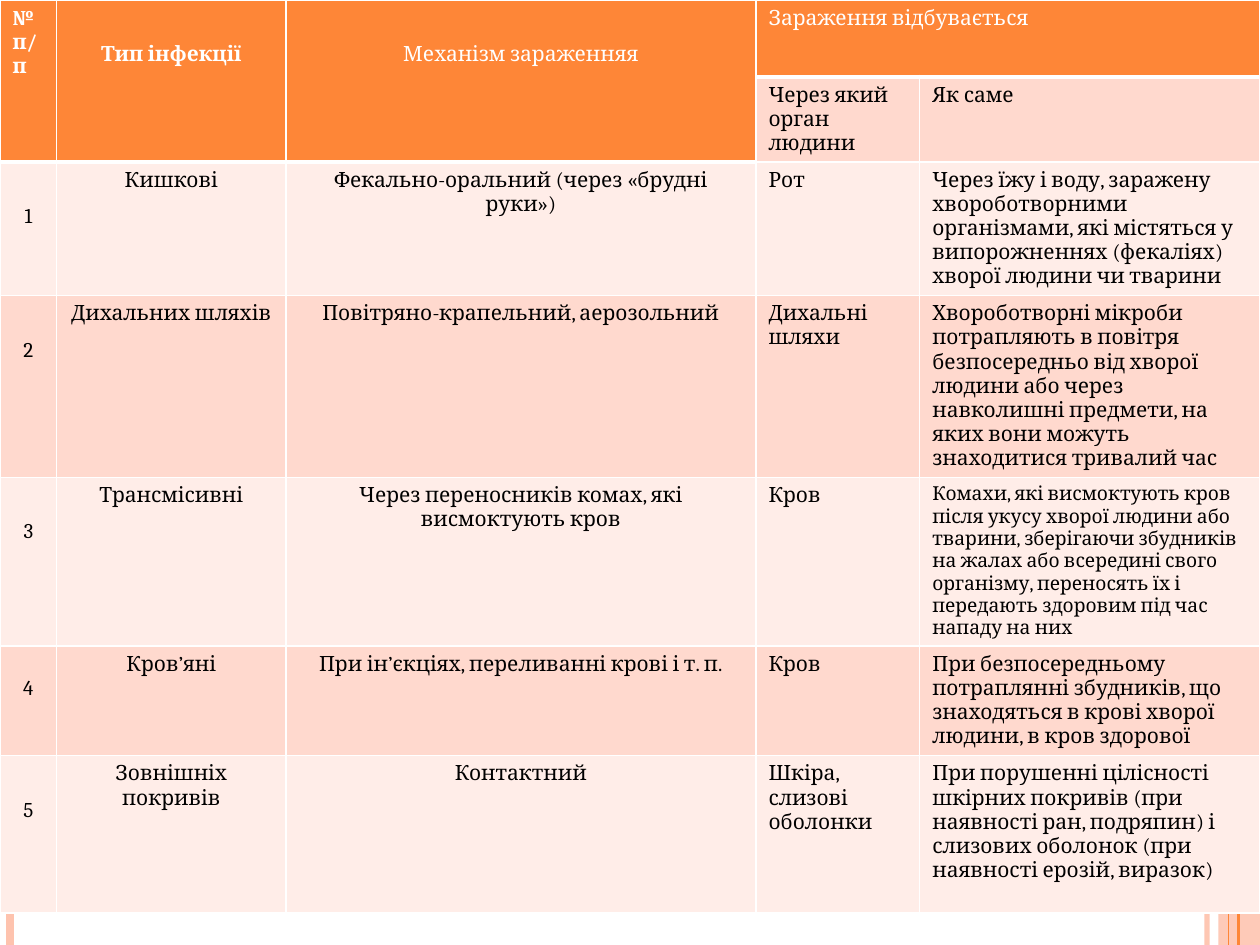
from lxml import etree
from pptx import Presentation
from pptx.dml.color import RGBColor
from pptx.enum.shapes import MSO_CONNECTOR, MSO_SHAPE
from pptx.enum.text import PP_ALIGN
from pptx.oxml.ns import qn
from pptx.util import Inches, Pt

LINE, RECT = MSO_CONNECTOR.STRAIGHT, MSO_SHAPE.RECTANGLE
LEFT, MID = PP_ALIGN.LEFT, PP_ALIGN.CENTER
HUES = {"head": "FE8637", "pale": "FEC3AE", "dark": "FFD9CE",
        "light": "FFEDE8", "white": "FFFFFF", "black": "000000"}
WIDE, HIGH = 10, 7.5
COLS = [0.45, 1.82, 3.73, 1.3, 2.7]
ROWS = [0.61, 0.67, 1.06, 1.44, 1.34, 0.87, 1.25]
DROP, HALF = 0.34, 0.24  # top margins of the lowered text

TEXT = [
    ["№\nп/п", "Тип інфекції", "Механізм зараженняя", "Зараження відбувається", ""],
    ["", "", "", "Через який орган людини", "Як саме"],
    ["1", "Кишкові", "Фекально-оральний (через «брудні руки»)", "Рот",
     "Через їжу і воду, заражену хвороботворними організмами, які містяться "
     "у випорожненнях (фекаліях) хворої людини чи тварини"],
    ["2", "Дихальних шляхів", "Повітряно-крапельний, аерозольний", "Дихальні шляхи",
     "Хвороботворні мікроби потрапляють в повітря безпосередньо від хворої людини "
     "або через навколишні предмети, на яких вони можуть знаходитися тривалий час"],
    ["3", "Трансмісивні", "Через переносників комах, які висмоктують кров", "Кров",
     "Комахи, які висмоктують кров після укусу хворої людини або тварини, зберігаючи "
     "збудників на жалах або всередині свого організму, переносять їх і передають "
     "здоровим під час нападу на них"],
    ["4", "Кров’яні", "При ін’єкціях, переливанні крові і т. п.", "Кров",
     "При безпосередньому потраплянні збудників, що знаходяться в крові хворої людини, "
     "в кров здорової"],
    ["5", "Зовнішніх покривів", "Контактний", "Шкіра, слизові оболонки",
     "При порушенні цілісності шкірних покривів (при наявності ран, подряпин) "
     "і слизових оболонок (при наявності ерозій, виразок)"],
]


def fade(fill, share):
    """Make the solid colour under an element see-through."""
    hue = fill.find(".//" + qn("a:srgbClr"))
    etree.SubElement(hue, qn("a:alpha"), val=str(share * 1000))


def edge(cell, side, width):
    """Give one side of a cell a white border."""
    line = etree.Element(qn("a:ln" + side), w=str(Pt(width)))
    fill = etree.SubElement(line, qn("a:solidFill"))
    etree.SubElement(fill, qn("a:srgbClr"), val=HUES["white"])
    cell._tc.get_or_add_tcPr().append(line)


deck = Presentation()
deck.slide_width, deck.slide_height = Inches(WIDE), Inches(HIGH)
slide = deck.slides.add_slide(deck.slide_layouts[6])

# Vertical stripes at the slide's edges
band = slide.shapes.add_shape(RECT, Inches(9.67), 0, Inches(0.33), Inches(HIGH))
band.shadow.inherit = False
band.fill.solid()
band.fill.fore_color.rgb = RGBColor.from_string(HUES["pale"])
band.line.fill.background()
fade(band._element.spPr, 87)

for x, hue, width, share in [(9.58, "pale", 3, 93), (0.08, "pale", 4.5, 100),
                             (9.83, "head", 1.5, 100), (9.75, "head", 0.75, 100)]:
    bar = slide.shapes.add_connector(LINE, Inches(x), 0, Inches(x), Inches(HIGH))
    bar.line.color.rgb = RGBColor.from_string(HUES[hue])
    bar.line.width = Pt(width)
    if share < 100:
        fade(bar._element.spPr, share)
    etree.SubElement(bar._element.spPr, qn("a:effectLst"))

# Table of infections
frame = slide.shapes.add_table(len(ROWS), len(COLS), 0, 0,
                               Inches(WIDE), Inches(sum(ROWS)))
grid = frame.table
grid.first_row = grid.horz_banding = False
for col, width in zip(grid.columns, COLS):
    col.width = Inches(width)
for row, height in zip(grid.rows, ROWS):
    row.height = Inches(height)
for c in range(3):
    grid.cell(0, c).merge(grid.cell(1, c))
grid.cell(0, 3).merge(grid.cell(0, 4))

for r, words in enumerate(TEXT):
    for c, text in enumerate(words):
        cell = grid.cell(r, c)
        head = r == 0 or (r == 1 and c < 3)
        for side in "LRTB":
            edge(cell, side, 3 if head and side == "B" else 1)
        cell.fill.solid()
        tone = "head" if head else "dark" if r % 2 else "light"
        cell.fill.fore_color.rgb = RGBColor.from_string(HUES[tone])
        if (r == 0 and c in (1, 2)) or (r > 1 and c == 0):
            cell.margin_top = Inches(HALF if text == "4" else DROP)
        if not text:
            continue
        for i, part in enumerate(text.split("\n")):
            body = cell.text_frame
            para = body.add_paragraph() if i else body.paragraphs[0]
            para.alignment = LEFT if c > 2 or (r == 0 and c == 0) else MID
            run = para.add_run()
            run.text = part
            run.font.name = "Cambria"
            run.font.size = Pt(11 if (r, c) == (4, 4) else 12)
            run.font.bold = r == 0 and c < 2
            run.font.color.rgb = RGBColor.from_string(HUES["white" if head else "black"])

deck.save("out.pptx")
